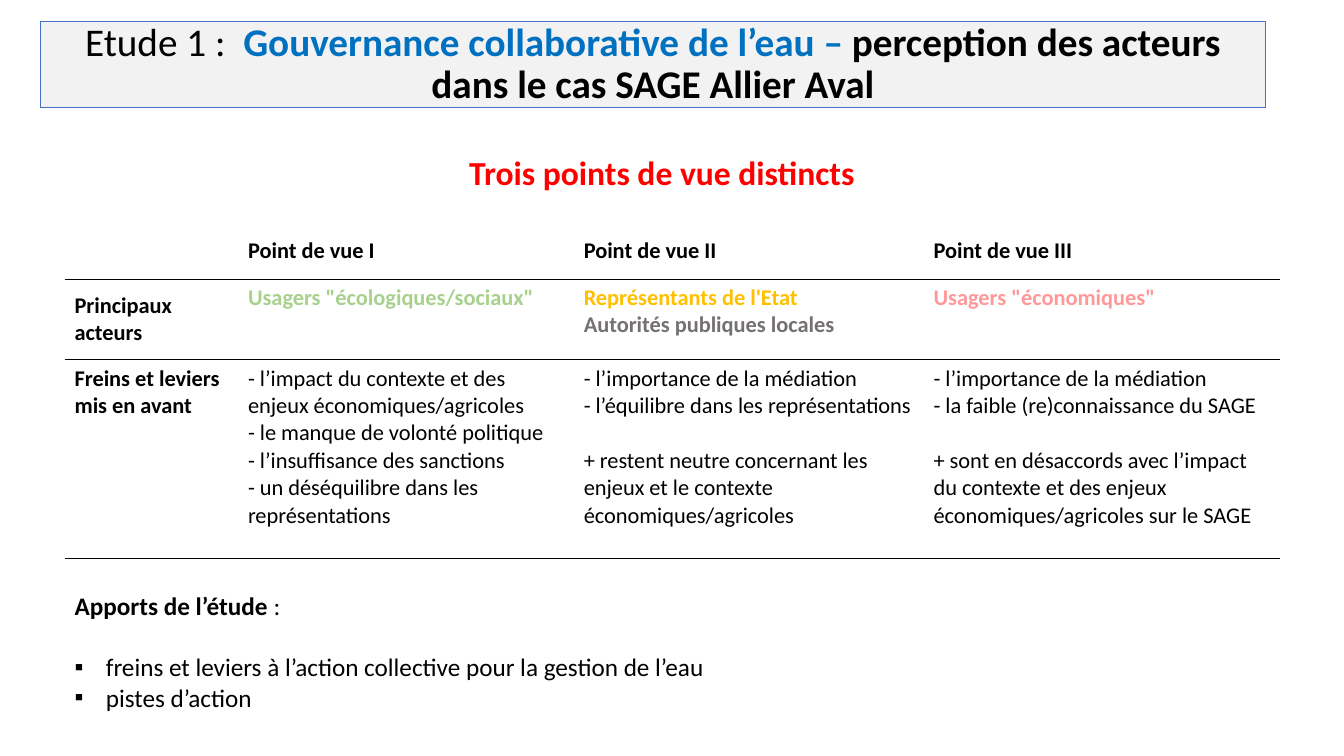
from lxml.etree import SubElement
from pptx import Presentation
from pptx.dml.color import RGBColor
from pptx.enum.text import MSO_ANCHOR, MSO_AUTO_SIZE, PP_ALIGN
from pptx.oxml import parse_xml
from pptx.oxml.ns import nsdecls, qn
from pptx.util import Inches, Pt

COLORS = {
    "black": "000000", "blue": "0070C0", "edge": "4472C4", "pale": "F2F2F2",
    "red": "FF0000", "green": "A9D18E", "gold": "FFC000", "grey": "767171",
    "pink": "FF9999",
}
WIDTHS = [1.72, 3.33, 3.47, 3.54]
HEIGHTS = [0.56, 0.8, 1.97]
HEADS = ["", "Point de vue I", "Point de vue II", "Point de vue III"]
ACTORS = [
    [("Principaux acteurs", "black")],
    [("Usagers \"écologiques/sociaux\"", "green")],
    [("Représentants de l'Etat", "gold"), ("Autorités publiques locales", "grey")],
    [("Usagers \"économiques\"", "pink")],
]
LEVERS = [
    ["Freins et leviers mis en avant"],
    ["- l’impact du contexte et des enjeux économiques/agricoles",
     "- le manque de volonté politique",
     "- l’insuffisance des sanctions",
     "- un déséquilibre dans les représentations"],
    ["- l’importance de la médiation",
     "- l’équilibre dans les représentations",
     "+ restent neutre concernant les enjeux et le contexte économiques/agricoles"],
    ["- l’importance de la médiation",
     "- la faible (re)connaissance du SAGE",
     "+ sont en désaccords avec l’impact du contexte et des enjeux "
     "économiques/agricoles sur le SAGE"],
]


def tint(name):
    """Return the named colour."""
    return RGBColor.from_string(COLORS[name])


def write(para, text, size=16, color="black", bold=False):
    """Add a formatted run to a paragraph."""
    run = para.add_run()
    run.text = text
    font = run.font
    font.name, font.size, font.bold = "Calibri", Pt(size), bold
    font.color.rgb = tint(color)


class Deck:
    """Hold the style and the current slide."""

    def __init__(self):
        """Open a wide deck with one slide."""
        self.prs = Presentation()
        self.prs.slide_width, self.prs.slide_height = Inches(13.33), Inches(7.5)
        self.slide = self.prs.slides.add_slide(self.prs.slide_layouts[1])

    def place(self, shape, left, top, width, height):
        """Move a shape and return its wrapped text frame."""
        shape.left, shape.top = Inches(left), Inches(top)
        shape.width, shape.height = Inches(width), Inches(height)
        frame = shape.text_frame
        frame.word_wrap, frame.auto_size = True, MSO_AUTO_SIZE.NONE
        return frame

    def title(self, parts, *box):
        """Fill the framed title."""
        shape = self.slide.shapes.title
        frame = self.place(shape, *box)
        frame.vertical_anchor = MSO_ANCHOR.MIDDLE
        shape.fill.solid()
        shape.fill.fore_color.rgb = tint("pale")
        shape.line.color.rgb, shape.line.width = tint("edge"), Pt(0.75)
        para = frame.paragraphs[0]
        para.alignment = PP_ALIGN.CENTER
        para.line_spacing, para.space_before = 0.9, Pt(10)
        for text, color, bold in parts:
            write(para, text, size=28, color=color, bold=bold)

    def label(self, text, *box):
        """Add the centred red heading."""
        shape = self.slide.shapes.add_textbox(0, 0, 0, 0)
        para = self.place(shape, *box).paragraphs[0]
        para.alignment = PP_ALIGN.CENTER
        write(para, text, size=24, color="red", bold=True)

    def body(self, head, items, *box):
        """Fill the body with a heading and bullets."""
        frame = self.place(self.slide.placeholders[1], *box)
        para = frame.paragraphs[0]
        self.bullet(para, 0)
        write(para, head, size=18, bold=True)
        write(para, ":", size=18)
        for num, item in enumerate(items):
            para = frame.add_paragraph()
            self.bullet(para, 0.31, "▪", 0 if num else 22)
            write(para, item, size=18)

    def bullet(self, para, indent, mark=None, before=0):
        """Set the indent, bullet and spacing of a paragraph."""
        para.space_before, para.line_spacing = Pt(before), 1.0
        props = para._p.get_or_add_pPr()
        props.set("marL", str(Inches(indent)))
        props.set("indent", str(-Inches(indent)))
        if mark:
            SubElement(props, qn("a:buFont"), typeface="Arial")
            SubElement(props, qn("a:buChar"), char=mark)
        else:
            SubElement(props, qn("a:buNone"))

    def table(self, rows, left, top):
        """Add the table of viewpoints."""
        frame = self.slide.shapes.add_table(
            len(HEIGHTS), len(WIDTHS), Inches(left), Inches(top),
            Inches(sum(WIDTHS)), Inches(sum(HEIGHTS)))
        grid = frame.table
        grid.first_row = grid.horz_banding = False
        for col, width in zip(grid.columns, WIDTHS):
            col.width = Inches(width)
        for row, height in zip(grid.rows, HEIGHTS):
            row.height = Inches(height)
        for y, row in enumerate(rows):
            for x, lines in enumerate(row):
                cell = grid.cell(y, x)
                middle = y == 0 or (y == 1 and x == 0)
                cell.vertical_anchor = MSO_ANCHOR.MIDDLE if middle else MSO_ANCHOR.TOP
                self.rules(cell, y > 0)
                self.fill(cell.text_frame, lines, y < 2 or x == 0)

    def fill(self, frame, lines, bold):
        """Write coloured lines, with a gap before each plus sign."""
        for num, (text, color) in enumerate(lines):
            para = frame.add_paragraph() if num else frame.paragraphs[0]
            if text.startswith("+"):
                para.space_before = Pt(19.5)
            write(para, text, color=color, bold=bold)

    def rules(self, cell, above):
        """Clear the cell fill and draw its horizontal borders."""
        cell.fill.background()
        props = cell._tc.get_or_add_tcPr()
        sides = {"L": False, "R": False, "T": above, "B": True}
        for num, (side, drawn) in enumerate(sides.items()):
            paint = "<a:noFill/>"
            if drawn:
                paint = f'<a:solidFill><a:srgbClr val="{COLORS["black"]}"/></a:solidFill>'
            props.insert(num, parse_xml(
                f'<a:ln{side} {nsdecls("a")} w="{Pt(1)}">{paint}</a:ln{side}>'))


def main():
    """Build and save the slide."""
    deck = Deck()
    deck.title([
        ("Etude 1 :  ", "black", False),
        ("Gouvernance collaborative de l’eau – ", "blue", True),
        ("perception des acteurs dans le cas SAGE Allier Aval", "black", True),
    ], 0.4, 0.21, 12.15, 0.86)
    heads = [[(head, "black")] if head else [] for head in HEADS]
    levers = [[(line, "black") for line in lines] for lines in LEVERS]
    deck.table([heads, ACTORS, levers], 0.64, 2.21)
    deck.body("Apports de l’étude ", [
        "freins et leviers à l’action collective pour la gestion de l’eau",
        "pistes d’action",
    ], 0.64, 5.81, 11.2, 1.31)
    deck.label("Trois points de vue distincts", 0.52, 1.46, 12.09, 0.5)
    deck.prs.save("out.pptx")


if __name__ == "__main__":
    main()
